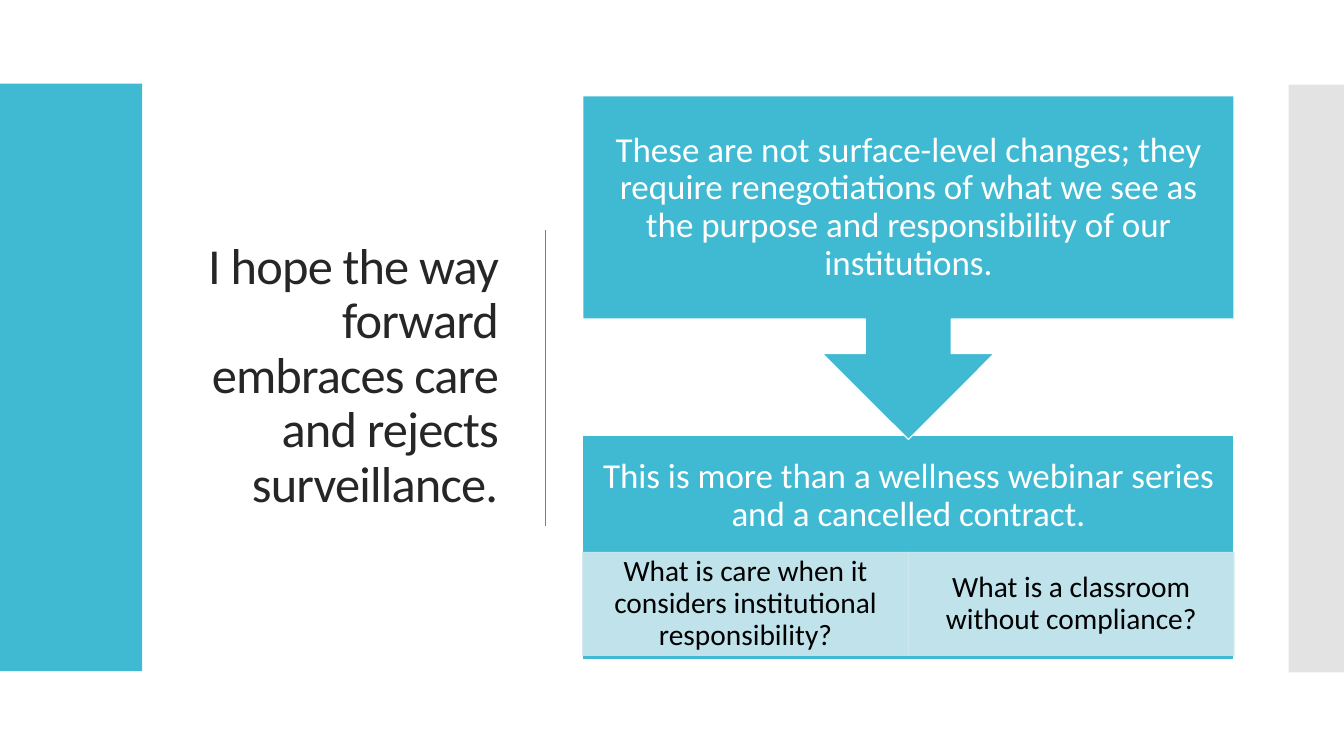
import pptx
import pptx.util
import pptx.dml.color
import pptx.enum.shapes
import pptx.enum.text
import pptx.oxml.ns
from lxml import etree

Inches, Pt = pptx.util.Inches, pptx.util.Pt
Shape = pptx.enum.shapes.MSO_SHAPE
Align = pptx.enum.text.PP_ALIGN

TITLE = "I hope the way forward embraces care and rejects surveillance."
FIRST = ("These are not surface-level changes; they require renegotiations of "
         "what we see as the purpose and responsibility of our institutions.")
SECOND = "This is more than a wellness webinar series and a cancelled contract."
ASKS = ["What is care when it considers institutional responsibility?",
        "What is a classroom without compliance?"]
TEAL, PALE, GREY, WHITE = "40BAD2", "CFE7EE", "C8C8C8", "FFFFFF"

LEFT, WIDE = 5.78, 6.46
ASK_TOP, ASK_HIGH = 5.48, 1.02
PAD = 0.19


def rgb(code):
    return pptx.dml.color.RGBColor.from_string(code)


def fade(fill, part):
    """Set the opacity of a solid fill, in percent."""
    tag = pptx.oxml.ns.qn("a:srgbClr")
    for tint in fill._xPr.find(pptx.oxml.ns.qn("a:solidFill")).iter(tag):
        alpha = etree.SubElement(tint, pptx.oxml.ns.qn("a:alpha"))
        alpha.set("val", str(part * 1000))


def block(kind, box, color, edge=None, clear=100):
    shape = slide.shapes.add_shape(kind, *map(Inches, box))
    shape.shadow.inherit = False
    shape.fill.solid()
    shape.fill.fore_color.rgb = rgb(color)
    if edge:
        shape.line.color.rgb = rgb(edge)
        shape.line.width = Pt(0.85)
    else:
        shape.line.fill.background()
    if clear < 100:
        fade(shape.fill, clear)
        if edge:
            fade(shape.line.fill, clear)
    return shape


def write(shape, text, size, color, align=Align.CENTER, pads=None):
    """Fill a shape with one paragraph; pads are left, top, right, bottom."""
    frame = shape.text_frame
    frame.text = text
    frame.word_wrap = True
    frame.auto_size = pptx.enum.text.MSO_AUTO_SIZE.NONE
    frame.vertical_anchor = pptx.enum.text.MSO_ANCHOR.MIDDLE
    if pads:
        (frame.margin_left, frame.margin_top,
         frame.margin_right, frame.margin_bottom) = map(Inches, pads)
    para = frame.paragraphs[0]
    para.alignment = align
    para.line_spacing = 0.9
    para.font.name = "Calibri"
    para.font.size = Pt(size)
    para.font.color.rgb = rgb(color)
    return para


deck = pptx.Presentation()
deck.slide_width, deck.slide_height = Inches(13.33), Inches(7.5)
slide = deck.slides.add_slide(deck.slide_layouts[5])

title = slide.shapes.title
title.left, title.top = Inches(1.68), Inches(0.94)
title.width, title.height = Inches(3.36), Inches(5.6)
para = write(title, TITLE, 36, "262626", Align.RIGHT)
para.runs[0].font._element.set("spc", "-60")

block(Shape.RECTANGLE, (0, 0.83, 1.41, 5.83), TEAL)
block(Shape.RECTANGLE, (12.78, 0.84, 0.55, 5.83), GREY, clear=50)

rule = slide.shapes.add_connector(
    pptx.enum.shapes.MSO_CONNECTOR.STRAIGHT,
    Inches(5.41), Inches(2.28), Inches(5.41), Inches(5.22))
rule.line.color.rgb = rgb("808080")
rule.line.width = Pt(1)
etree.SubElement(rule._element.spPr, pptx.oxml.ns.qn("a:effectLst"))

base = block(Shape.RECTANGLE, (LEFT, 4.32, WIDE, 2.22), TEAL, WHITE)
write(base, SECOND, 25, WHITE, pads=(PAD, PAD, PAD, PAD + ASK_HIGH))

step = WIDE / len(ASKS)
for i, ask in enumerate(ASKS):
    cell = block(Shape.RECTANGLE, (LEFT + i * step, ASK_TOP, step, ASK_HIGH),
                 PALE, PALE, 90)
    write(cell, ask, 21, "000000", pads=(0.16, 0.03, 0.16, 0.03))

call = block(Shape.DOWN_ARROW_CALLOUT, (LEFT, 0.95, WIDE, 3.41), TEAL, WHITE)
write(call, FIRST, 25, WHITE, pads=(PAD,) * 4)

deck.save("out.pptx")
